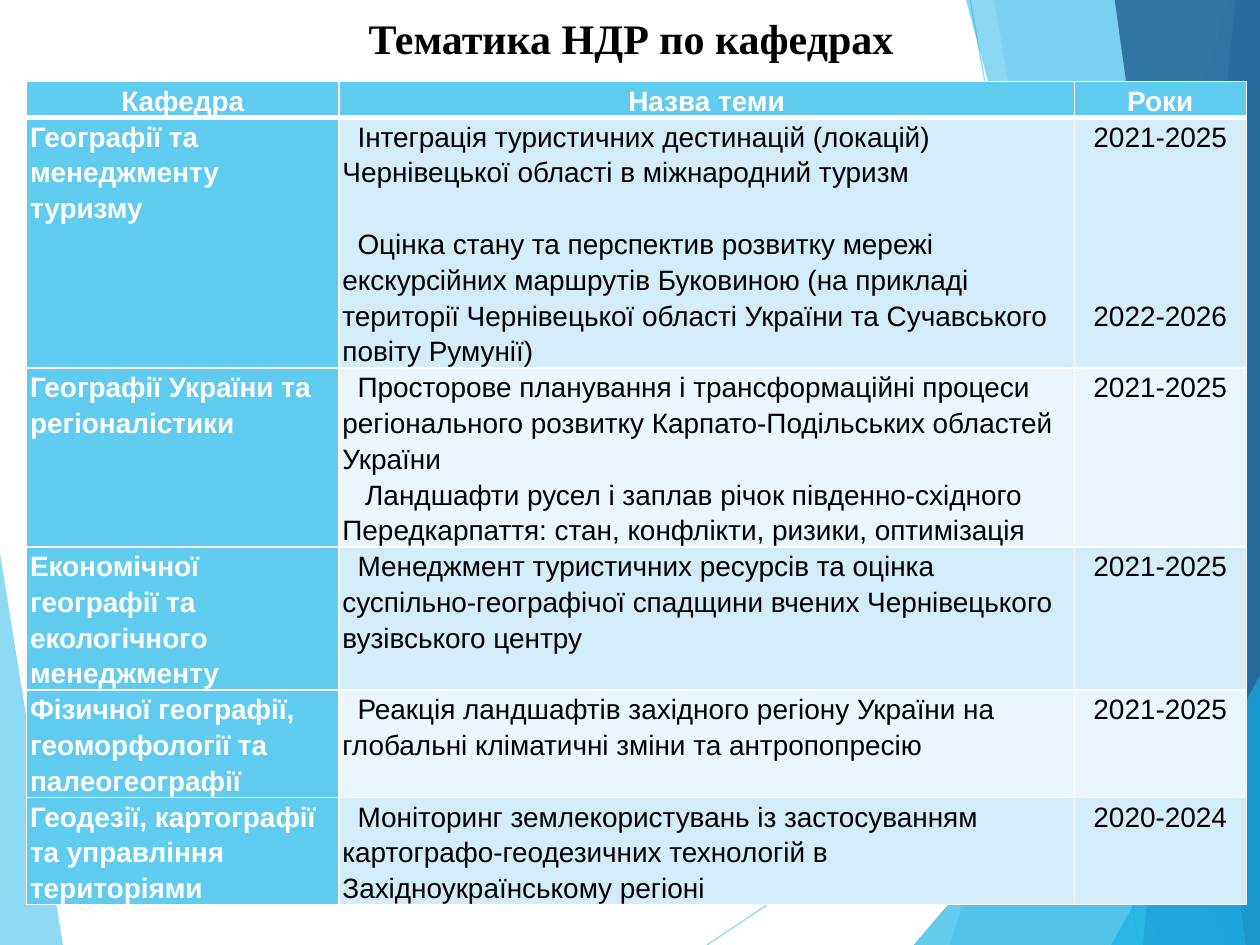
"""Build the slide listing research topics by department."""
from dataclasses import dataclass

from lxml import etree
from pptx import Presentation
from pptx.dml.color import RGBColor
from pptx.enum import shapes, text
from pptx.oxml import ns
from pptx.util import Pt

WHITE = RGBColor(0xFF, 0xFF, 0xFF)
BLACK = RGBColor(0, 0, 0)
SKY = RGBColor(0x5F, 0xCB, 0xEF)
CYAN = RGBColor(0x17, 0xB0, 0xE4)
BLUE = RGBColor(0x2E, 0x83, 0xC3)
NAVY = RGBColor(0x22, 0x62, 0x92)
BANDS = (RGBColor(0xD2, 0xEC, 0xF9), RGBColor(0xEA, 0xF6, 0xFC))

WIDTH, HEIGHT = 720, 540
LINE_HEIGHT = 20.45
INDENT = 8.64


@dataclass(frozen=True)
class Facet:
    points: tuple[tuple[float, float], ...]
    color: RGBColor
    opacity: int


@dataclass(frozen=True)
class Ray:
    start: tuple[float, float]
    end: tuple[float, float]


@dataclass(frozen=True)
class Entry:
    words: str
    skipped_lines: int = 0
    indent: float = 0


@dataclass(frozen=True)
class Department:
    name: str
    topics: tuple[Entry, ...]
    years: tuple[Entry, ...]
    lines: int


LEFT_FACET = Facet(((0, 316), (35.5, HEIGHT), (0, HEIGHT)), SKY, 70)
RAYS = (Ray((404, HEIGHT), (WIDTH, 329)), Ray((554.4, 0), (651, HEIGHT)))
RIGHT_FACETS = (
    Facet(((702, 0), (543, HEIGHT), (WIDTH, HEIGHT), (WIDTH, 0)), SKY, 36),
    Facet(((567.5, 0), (662, HEIGHT), (WIDTH, HEIGHT), (WIDTH, 0)), SKY, 20),
    Facet(((522.5, HEIGHT), (WIDTH, 309), (WIDTH, HEIGHT)), CYAN, 66),
    Facet(((552, 0), (698.5, HEIGHT), (WIDTH, HEIGHT), (WIDTH, 0)), CYAN, 50),
    Facet(((706.5, 0), (653, HEIGHT), (WIDTH, HEIGHT), (WIDTH, 0)), BLUE, 70),
    Facet(((637, 0), (711.5, HEIGHT), (WIDTH, HEIGHT), (WIDTH, 0)), NAVY, 82),
    Facet(((635, HEIGHT), (WIDTH, 385.5), (WIDTH, HEIGHT)), CYAN, 66),
)

HEADINGS = ("Кафедра", "Назва теми", "Роки")
COLUMN_WIDTHS = (178.5, 420.2, 98.3)
DEPARTMENTS = (
    Department(
        "Географії та менеджменту туризму",
        (Entry("Інтеграція туристичних дестинацій (локацій) Чернівецької області "
               "в міжнародний туризм", indent=INDENT),
         Entry("Оцінка стану та перспектив розвитку мережі екскурсійних маршрутів "
               "Буковиною (на прикладі території Чернівецької області України та "
               "Сучавського повіту Румунії)", 1, INDENT)),
        (Entry("2021-2025"), Entry("2022-2026", 4)), 7),
    Department(
        "Географії України та регіоналістики",
        (Entry("Просторове планування і трансформаційні процеси регіонального "
               "розвитку Карпато-Подільських областей України", indent=INDENT),
         Entry("Ландшафти русел і заплав річок південно-східного Передкарпаття: "
               "стан, конфлікти, ризики, оптимізація", indent=13)),
        (Entry("2021-2025"),), 5),
    Department(
        "Економічної географії та екологічного менеджменту",
        (Entry("Менеджмент туристичних ресурсів та оцінка суспільно-географічої "
               "спадщини вчених Чернівецького вузівського центру", indent=INDENT),),
        (Entry("2021-2025"),), 4),
    Department(
        "Фізичної географії, геоморфології та палеогеографії",
        (Entry("Реакція ландшафтів західного регіону України на глобальні "
               "кліматичні зміни та антропопресію", indent=INDENT),),
        (Entry("2021-2025"),), 3),
    Department(
        "Геодезії, картографії та управління територіями",
        (Entry("Моніторинг землекористувань із застосуванням "
               "картографо-геодезичних технологій в Західноукраїнському регіоні",
               indent=INDENT),),
        (Entry("2020-2024"),), 3),
)


def set_opacity(shape, percent: int) -> None:
    for color in shape.element.spPr.iter(ns.qn("a:srgbClr")):
        etree.SubElement(color, ns.qn("a:alpha")).set("val", str(percent * 1000))


def draw_facet(backdrop, facet: Facet) -> None:
    builder = backdrop.shapes.build_freeform(*facet.points[0], scale=Pt(1))
    builder.add_line_segments(facet.points[1:], close=True)
    shape = builder.convert_to_shape()
    shape.shadow.inherit = False
    shape.fill.solid()
    shape.fill.fore_color.rgb = facet.color
    shape.line.fill.background()
    set_opacity(shape, facet.opacity)


def draw_ray(backdrop, ray: Ray) -> None:
    line = backdrop.shapes.add_connector(
        shapes.MSO_CONNECTOR.STRAIGHT, *map(Pt, ray.start + ray.end))
    line.line.color.rgb = SKY
    line.line.width = Pt(0.75)
    set_opacity(line, 70)
    etree.SubElement(line.element.spPr, ns.qn("a:effectLst"))


def write_run(paragraph, words: str, font: str, size: float,
              color: RGBColor, bold: bool) -> None:
    run = paragraph.add_run()
    run.text = words
    run.font.name = font
    run.font.size = Pt(size)
    run.font.bold = bold
    run.font.color.rgb = color


def add_border(cell, side: str, width: float) -> None:
    properties = cell._tc.get_or_add_tcPr()
    border = etree.SubElement(properties, ns.qn(f"a:{side}"), w=str(Pt(width)))
    fill = etree.SubElement(border, ns.qn("a:solidFill"))
    etree.SubElement(fill, ns.qn("a:srgbClr"), val=str(WHITE))


def fill_cell(cell, entries: tuple[Entry, ...], fill: RGBColor, centered: bool,
              emphasized: bool, top: float = 1, bottom: float = 1) -> None:
    for side, width in (("lnL", 1), ("lnR", 1), ("lnT", top), ("lnB", bottom)):
        add_border(cell, side, width)
    cell.fill.solid()
    cell.fill.fore_color.rgb = fill
    cell.margin_left = cell.margin_right = Pt(2)
    cell.margin_top = cell.margin_bottom = Pt(0)
    for index, entry in enumerate(entries):
        frame = cell.text_frame
        paragraph = frame.add_paragraph() if index else frame.paragraphs[0]
        paragraph.alignment = text.PP_ALIGN.CENTER if centered else text.PP_ALIGN.LEFT
        paragraph.line_spacing = 1.15
        if entry.skipped_lines:
            paragraph.space_before = Pt(entry.skipped_lines * LINE_HEIGHT)
        if entry.indent:
            paragraph._p.get_or_add_pPr().set("indent", str(Pt(entry.indent)))
        write_run(paragraph, entry.words, "Arial", 16,
                  WHITE if emphasized else BLACK, emphasized)


def draw_topics(slide) -> None:
    line_counts = [1] + [department.lines for department in DEPARTMENTS]
    topics = slide.shapes.add_table(
        len(line_counts), len(HEADINGS), Pt(15.2), Pt(46.6),
        Pt(sum(COLUMN_WIDTHS)), Pt(sum(line_counts) * LINE_HEIGHT)).table
    for column, width in zip(topics.columns, COLUMN_WIDTHS):
        column.width = Pt(width)
    for row, lines in zip(topics.rows, line_counts):
        row.height = Pt(lines * LINE_HEIGHT)
    for column, heading in enumerate(HEADINGS):
        fill_cell(topics.cell(0, column), (Entry(heading),), SKY, True, True, bottom=3)
    for row, department in enumerate(DEPARTMENTS, 1):
        band = BANDS[(row - 1) % 2]
        top = 3 if row == 1 else 1
        fill_cell(topics.cell(row, 0), (Entry(department.name),), SKY, False, True, top)
        fill_cell(topics.cell(row, 1), department.topics, band, False, False, top)
        fill_cell(topics.cell(row, 2), department.years, band, True, False, top)


def main() -> None:
    deck = Presentation()
    deck.slide_width, deck.slide_height = Pt(WIDTH), Pt(HEIGHT)
    slide = deck.slides.add_slide(deck.slide_layouts[5])
    title = slide.shapes.title
    backdrop = slide.shapes.add_group_shape()
    draw_facet(backdrop, LEFT_FACET)
    for ray in RAYS:
        draw_ray(backdrop, ray)
    for facet in RIGHT_FACETS:
        draw_facet(backdrop, facet)
    title.element.addprevious(backdrop.element)
    title.left, title.top, title.width, title.height = map(Pt, (39.6, 0, 648, 43.2))
    title.text_frame.vertical_anchor = text.MSO_ANCHOR.MIDDLE
    heading = title.text_frame.paragraphs[0]
    heading.alignment = text.PP_ALIGN.CENTER
    write_run(heading, "Тематика НДР по кафедрах ", "Times New Roman", 24, BLACK, True)
    draw_topics(slide)
    deck.save("out.pptx")


if __name__ == "__main__":
    main()
